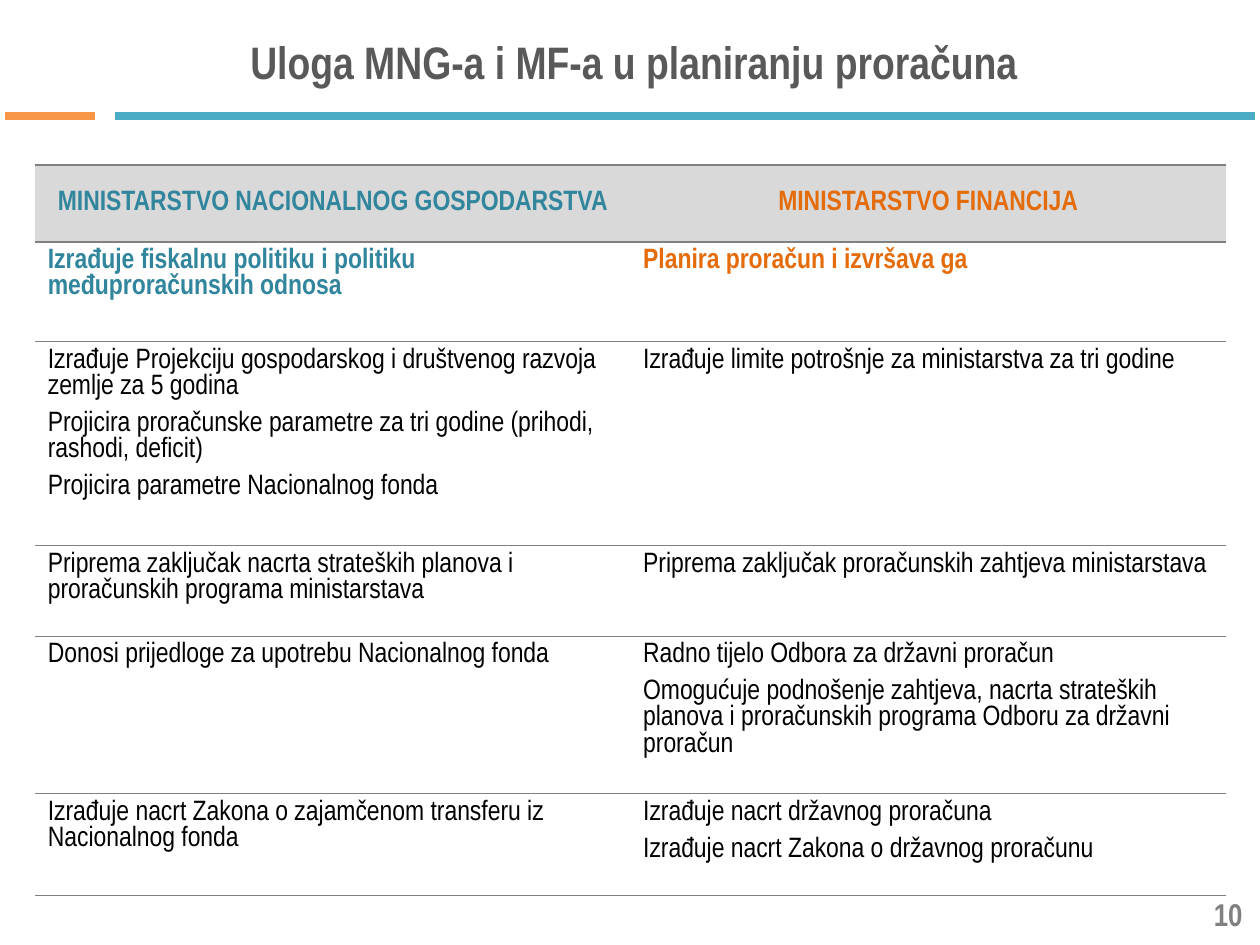
from lxml import etree
from pptx import Presentation
from pptx.dml.color import RGBColor
from pptx.enum import shapes, text
from pptx.oxml import ns
from pptx.util import Inches, Pt

FONT = "Arial Narrow"
DARK = RGBColor(0x59, 0x59, 0x59)
GREY = RGBColor(0x80, 0x80, 0x80)
HEADER_FILL = RGBColor(0xD9, 0xD9, 0xD9)
BLACK = RGBColor(0, 0, 0)
TEAL = RGBColor(0x31, 0x85, 0x9C)
ORANGE = RGBColor(0xE4, 0x6C, 0x0A)
RULE_TEAL = RGBColor(0x4B, 0xAC, 0xC6)
RULE_ORANGE = RGBColor(0xF7, 0x96, 0x46)

ROW_HEIGHTS = [0.61, 0.79, 1.62, 0.72, 1.11, 0.81]
ROWS = [
    (["MINISTARSTVO NACIONALNOG GOSPODARSTVA"], ["MINISTARSTVO FINANCIJA"]),
    (["Izrađuje fiskalnu politiku i politiku međuproračunskih odnosa"],
     ["Planira proračun i izvršava ga"]),
    (["Izrađuje Projekciju gospodarskog i društvenog razvoja zemlje za 5 godina",
      "Projicira proračunske parametre za tri godine (prihodi, rashodi, deficit)",
      "Projicira parametre Nacionalnog fonda"],
     ["Izrađuje limite potrošnje za ministarstva za tri godine"]),
    (["Priprema zaključak nacrta strateških planova i proračunskih programa ministarstava"],
     ["Priprema zaključak proračunskih zahtjeva ministarstava"]),
    (["Donosi prijedloge za upotrebu Nacionalnog fonda"],
     ["Radno tijelo Odbora za državni proračun",
      "Omogućuje podnošenje zahtjeva, nacrta strateških planova i proračunskih programa "
      "Odboru za državni proračun"]),
    (["Izrađuje nacrt Zakona o zajamčenom transferu iz Nacionalnog fonda"],
     ["Izrađuje nacrt državnog proračuna",
      "Izrađuje nacrt Zakona o državnog proračunu"]),
]


def write(frame, lines, size, color, bold=True, align=text.PP_ALIGN.LEFT, after=0):
    frame.word_wrap = True
    for index, line in enumerate(lines):
        para = frame.paragraphs[0] if index == 0 else frame.add_paragraph()
        para.alignment = align
        para.space_before, para.space_after = Pt(0), Pt(after)
        span = para.add_run()
        span.text = line
        span.font.name, span.font.size, span.font.bold = FONT, Pt(size), bold
        span.font.color.rgb = color


def add_title(page, left, top, width, height):
    title = page.shapes.title
    title.left, title.top, title.width, title.height = map(Inches, (left, top, width, height))
    title.text_frame.vertical_anchor = text.MSO_ANCHOR.MIDDLE
    write(title.text_frame, ["Uloga MNG-a i MF-a u planiranju proračuna"], 26, DARK,
          align=text.PP_ALIGN.CENTER, after=6)


def add_rule(page, left, right, top, color):
    rule = page.shapes.add_connector(shapes.MSO_CONNECTOR.STRAIGHT, Inches(left), Inches(top),
                                     Inches(right), Inches(top))
    rule.line.color.rgb, rule.line.width = color, Pt(4.5)
    etree.SubElement(rule._element.spPr, ns.qn("a:effectLst"))


def set_borders(cell, top, bottom):
    """Draw grey lines above and below, with widths in points, and none at the sides."""
    props = cell._tc.get_or_add_tcPr()
    for index, (side, width) in enumerate([("L", 0), ("R", 0), ("T", top), ("B", bottom)]):
        border = etree.Element(ns.qn("a:ln" + side), w=str(Pt(width)))
        props.insert(index, border)
        if width:
            fill = etree.SubElement(border, ns.qn("a:solidFill"))
            etree.SubElement(fill, ns.qn("a:srgbClr"), val=str(GREY))
        else:
            etree.SubElement(border, ns.qn("a:noFill"))


def fill_cell(cell, lines, row, accent):
    header = row == 0
    if header:
        cell.fill.solid()
        cell.fill.fore_color.rgb = HEADER_FILL
        cell.vertical_anchor = text.MSO_ANCHOR.MIDDLE
    else:
        cell.fill.background()
    write(cell.text_frame, lines, 16, accent if row < 2 else BLACK, bold=row < 2,
          align=text.PP_ALIGN.CENTER if header else text.PP_ALIGN.LEFT,
          after=6 if len(lines) > 1 else 0)
    set_borders(cell, 1.5 if row < 2 else 0.75, 1.5 if header else 0.75)


def add_duties_table(page, left, top, width):
    frame = page.shapes.add_table(len(ROWS), 2, Inches(left), Inches(top), Inches(width),
                                  Inches(sum(ROW_HEIGHTS)))
    table = frame.table
    table.first_row = table.horz_banding = False
    for column in table.columns:
        column.width = Inches(width / 2)
    for row, (height, contents) in enumerate(zip(ROW_HEIGHTS, ROWS)):
        table.rows[row].height = Inches(height)
        for column, (lines, accent) in enumerate(zip(contents, (TEAL, ORANGE))):
            fill_cell(table.cell(row, column), lines, row, accent)


def add_page_number(page, left, top, width, height):
    box = page.shapes.add_textbox(*map(Inches, (left, top, width, height)))
    box.text_frame.vertical_anchor = text.MSO_ANCHOR.MIDDLE
    write(box.text_frame, ["10"], 18, GREY, align=text.PP_ALIGN.RIGHT)


def main():
    deck = Presentation()
    deck.slide_width, deck.slide_height = Inches(10), Inches(7.5)
    page = deck.slides.add_slide(deck.slide_layouts[5])
    add_title(page, 0.35, 0.14, 9.37, 0.69)
    add_page_number(page, 7.63, 7.05, 2.33, 0.4)
    add_rule(page, 0.91, 9.96, 0.92, RULE_TEAL)
    add_rule(page, 0.04, 0.75, 0.92, RULE_ORANGE)
    add_duties_table(page, 0.28, 1.31, 9.45)
    deck.save("out.pptx")


if __name__ == "__main__":
    main()
